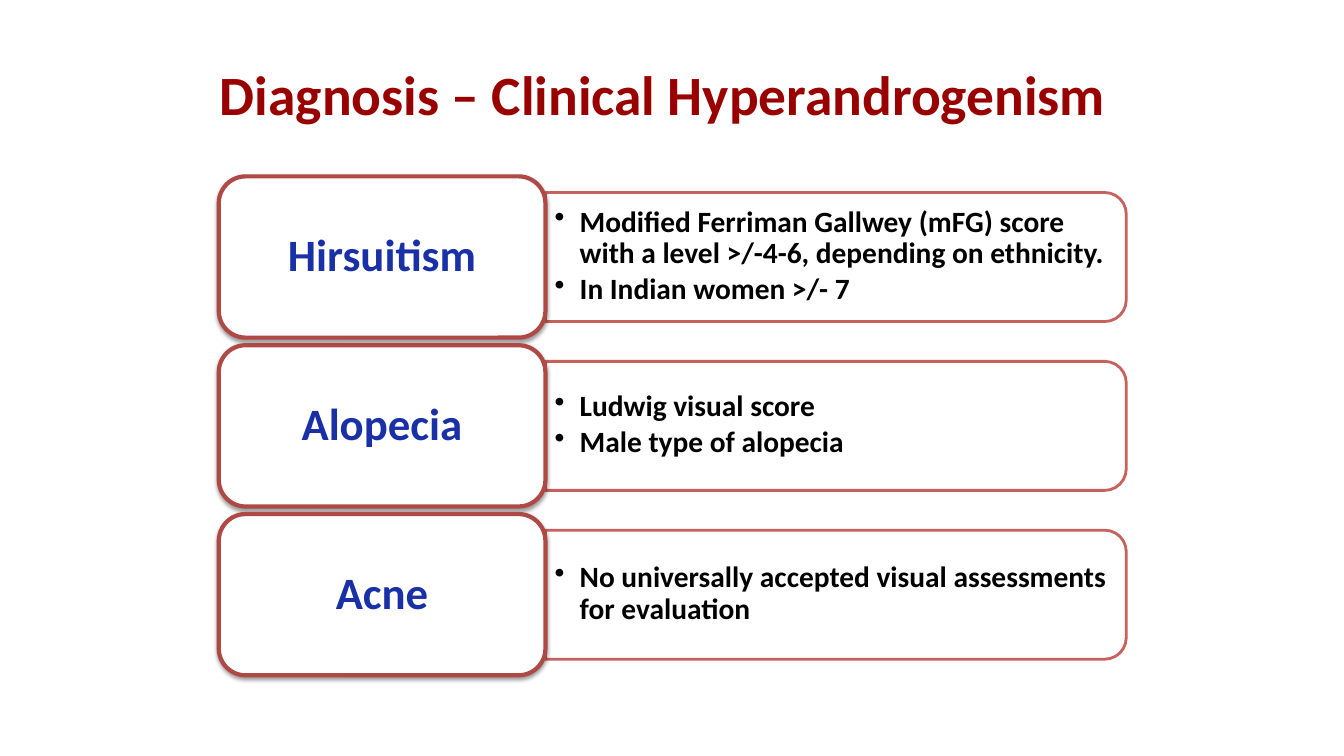
import pptx
import pptx.util
import pptx.dml.color
import pptx.enum.shapes
import pptx.enum.text
import pptx.oxml.ns
from lxml import etree

Inches, Pt = pptx.util.Inches, pptx.util.Pt
RGB = pptx.dml.color.RGBColor.from_string
SHAPE = pptx.enum.shapes.MSO_SHAPE
ALIGN = pptx.enum.text.PP_ALIGN
MIDDLE = pptx.enum.text.MSO_ANCHOR.MIDDLE
qn = pptx.oxml.ns.qn

COLORS = {"title": "990000", "label": "1930A7", "body": "000000",
          "panel_line": "C0504D", "label_line": "AE4946", "fill": "FFFFFF"}
FINDINGS = [
    ("Hirsuitism", ["Modified Ferriman Gallwey (mFG) score with a level >/-4-6, depending on ethnicity.",
                    "In Indian women >/- 7"]),
    ("Alopecia", ["Ludwig visual score", "Male type of alopecia"]),
    ("Acne", ["No universally accepted visual assessments for evaluation"]),
]
TOP, LAST_TOP, LABEL_H = 1.75, 5.1, 1.6
PANEL_W, PANEL_H, PANEL_CX = 5.76, 1.28, 8.29


def set_text(tf, lines, size, color, align, inset_x, inset_y):
    frame = {"word_wrap": True, "vertical_anchor": MIDDLE,
             "margin_left": Inches(inset_x), "margin_right": Inches(inset_x),
             "margin_top": Inches(inset_y), "margin_bottom": Inches(inset_y)}
    for name, value in frame.items():
        setattr(tf, name, value)
    for i, line in enumerate(lines):
        p = tf.paragraphs[0] if i == 0 else tf.add_paragraph()
        p.alignment = align
        p.line_spacing = 0.9
        r = p.add_run()
        r.text = line
        for name, value in {"name": "Calibri", "size": Pt(size), "bold": True}.items():
            setattr(r.font, name, value)
        r.font.color.rgb = RGB(COLORS[color])


def add_box(kind, x, y, w, h, line, width):
    sp = s.shapes.add_shape(kind, Inches(x), Inches(y), Inches(w), Inches(h))
    sp.fill.solid()
    sp.fill.fore_color.rgb = RGB(COLORS["fill"])
    sp.line.color.rgb = RGB(COLORS[line])
    sp.line.width = Pt(width)
    sp.shadow.inherit = False
    return sp


prs = pptx.Presentation()
prs.slide_width, prs.slide_height = Inches(13.33), Inches(7.5)
s = prs.slides.add_slide(prs.slide_layouts[5])

# Title
title = s.shapes.title
for name, value in {"left": 1.99, "top": 0.3, "width": 9.17, "height": 1.25}.items():
    setattr(title, name, Inches(value))
set_text(title.text_frame, ["Diagnosis – Clinical Hyperandrogenism"], 39.6, "title",
         ALIGN.CENTER, 0.1, 0.05)
title.text_frame.paragraphs[0].line_spacing = 1.0

for i, (label, points) in enumerate(FINDINGS):
    top = TOP + i * (LAST_TOP - TOP) / (len(FINDINGS) - 1)
    mid = top + LABEL_H / 2

    # Panel, turned so that its rounded corners face right
    panel = add_box(SHAPE.ROUND_2_SAME_RECTANGLE, PANEL_CX - PANEL_H / 2, mid - PANEL_W / 2,
                    PANEL_H, PANEL_W, "panel_line", 2)
    panel.rotation = 90
    for clr in panel.element.spPr.iter(qn("a:srgbClr")):
        etree.SubElement(clr, qn("a:alpha"), val="90000")

    # Bulleted criteria
    box = s.shapes.add_textbox(Inches(5.41), Inches(mid - 0.58), Inches(5.7), Inches(1.15))
    set_text(box.text_frame, points, 21, "body", ALIGN.LEFT, 0.09, 0.04)
    for p in box.text_frame.paragraphs:
        p.space_after = Pt(3)
        pPr = p._p.get_or_add_pPr()
        pPr.set("marL", str(Inches(0.25)))
        pPr.set("indent", str(-Inches(0.25)))
        etree.SubElement(pPr, qn("a:buChar"), char="•")

    # Label with a soft shadow below
    card = add_box(SHAPE.ROUNDED_RECTANGLE, 2.17, top, 3.24, LABEL_H, "label_line", 3)
    effects = card.element.spPr.find(qn("a:effectLst"))
    shadow = etree.SubElement(effects, qn("a:outerShdw"), blurRad=str(Pt(3.1)),
                              dist=str(Pt(1.6)), dir="5400000", rotWithShape="0")
    clr = etree.SubElement(shadow, qn("a:srgbClr"), val="000000")
    etree.SubElement(clr, qn("a:alpha"), val="38000")
    set_text(card.text_frame, [label], 32, "label", ALIGN.CENTER, 0.13, 0.07)

prs.save("out.pptx")
